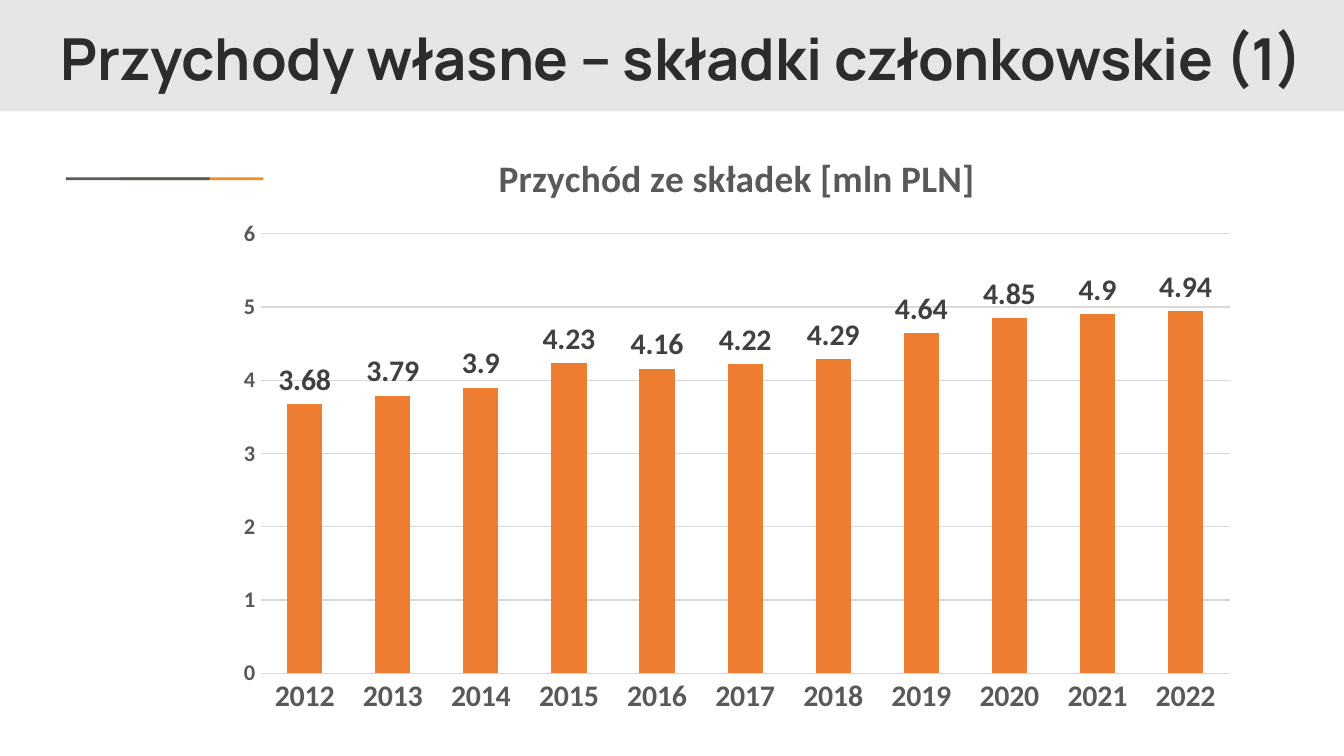
from lxml.etree import SubElement
from pptx import Presentation
from pptx.chart.data import CategoryChartData
from pptx.dml.color import RGBColor
from pptx.enum.chart import XL_CHART_TYPE, XL_LABEL_POSITION, XL_TICK_MARK
from pptx.enum.shapes import MSO_SHAPE
from pptx.enum.text import MSO_ANCHOR, PP_ALIGN
from pptx.oxml.ns import qn
from pptx.util import Inches, Pt

TITLE = "Przychody własne – składki członkowskie (1)"
CHART_TITLE = "Przychód ze składek [mln PLN]"
SERIES_NAME = "Series 1"
FIRST_YEAR = 2012
REVENUE = [3.68, 3.79, 3.9, 4.23, 4.16, 4.22, 4.29, 4.64, 4.85, 4.9, 4.94]

WIDTH = 10
HEIGHT = WIDTH * 9 / 16
THEME = {
    "band": "E7E6E6", "orange": "F68B1F", "gray": "58595B",
    "bar": "ED7D31", "grid": "D9D9D9",
    "title": {"name": "Manrope", "size": 31, "bold": True, "color": "2C2C2C"},
    "chart": {"name": "Calibri", "size": 10, "color": "000000"},
    "chart_title": {"name": "Calibri", "size": 20, "bold": True, "color": "595959"},
    "years": {"name": "Calibri", "size": 16, "bold": True, "color": "595959"},
    "scale": {"name": "Calibri", "size": 12, "bold": True, "color": "595959"},
    "labels": {"name": "Calibri", "size": 16, "bold": True, "color": "404040"},
}
RULE_LENGTH, RULE_WEIGHT, RULE_TOP = 1.07, 0.02, 1.32
BLOCKS = [  # left, top, width, height, colour
    (0, 0, WIDTH, 0.83, "band"),
    (0.89, RULE_TOP, RULE_LENGTH, RULE_WEIGHT, "orange"),
    (0.49, RULE_TOP, RULE_LENGTH, RULE_WEIGHT, "gray"),
]
TITLE_BOX = (0.29, 0.1, 9.56, 0.72)
CHART_BOX = (1.66, 0.97, 7.64, 4.44)
# Inches from the chart's top left corner
PLOT_AREA = {"x": 0.28, "y": 0.77, "w": 7.21, "h": 3.27}
TITLE_SPOT = {"x": 2, "y": 0.11}


def inches(box):
    return [Inches(length) for length in box]


def style_font(font, role):
    for key, value in THEME[role].items():
        if key == "color":
            font.color.rgb = RGBColor.from_string(value)
        else:
            setattr(font, key, Pt(value) if key == "size" else value)


def paint_line(line, color):
    line.color.rgb = RGBColor.from_string(THEME[color])
    line.width = Pt(0.75)


def place(element, spot, inner=False):
    """Fix a chart part at a spot, stored as shares of the chart's size."""
    layout = element.find(qn("c:layout"))
    if layout is None:
        layout = SubElement(element, qn("c:layout"))
        text = element.find(qn("c:tx"))
        if text is not None:
            text.addnext(layout)
        else:
            element.insert(0, layout)
    manual = SubElement(layout, qn("c:manualLayout"))
    if inner:
        SubElement(manual, qn("c:layoutTarget")).set("val", "inner")
    for side in ("x", "y"):
        SubElement(manual, qn(f"c:{side}Mode")).set("val", "edge")
    chart_width, chart_height = CHART_BOX[2:]
    for side, length in spot.items():
        share = length / (chart_width if side in "xw" else chart_height)
        SubElement(manual, qn(f"c:{side}")).set("val", f"{share:.4f}")


def add_block(page, left, top, width, height, color):
    block = page.shapes.add_shape(MSO_SHAPE.RECTANGLE, *inches((left, top, width, height)))
    block.shadow.inherit = False
    block.fill.solid()
    block.fill.fore_color.rgb = RGBColor.from_string(THEME[color])
    block.line.fill.background()


def add_title(page):
    frame = page.shapes.add_textbox(*inches(TITLE_BOX)).text_frame
    settings = {"word_wrap": True, "vertical_anchor": MSO_ANCHOR.MIDDLE,
                "margin_top": 0, "margin_bottom": 0}
    for key, value in settings.items():
        setattr(frame, key, value)
    para = frame.paragraphs[0]
    para.alignment, para.line_spacing = PP_ALIGN.CENTER, 0.9
    span = para.add_run()
    span.text = TITLE
    style_font(span.font, "title")


def add_revenue_chart(page):
    data = CategoryChartData()
    data.categories = [str(FIRST_YEAR + step) for step in range(len(REVENUE))]
    data.add_series(SERIES_NAME, REVENUE)
    chart = page.shapes.add_chart(
        XL_CHART_TYPE.COLUMN_CLUSTERED, *inches(CHART_BOX), data).chart
    style_font(chart.font, "chart")
    chart.has_legend = False
    chart.has_title = True
    para = chart.chart_title.text_frame.paragraphs[0]
    span = para.add_run()
    span.text = CHART_TITLE
    style_font(span.font, "chart_title")
    chart.chart_title.include_in_layout = False

    years, scale = chart.category_axis, chart.value_axis
    for axis, role in ((years, "years"), (scale, "scale")):
        axis.major_tick_mark = axis.minor_tick_mark = XL_TICK_MARK.NONE
        style_font(axis.tick_labels.font, role)
    paint_line(years.format.line, "grid")
    scale.format.line.fill.background()
    paint_line(scale.major_gridlines.format.line, "grid")
    for key, value in {"minimum_scale": 0, "maximum_scale": 6, "major_unit": 1}.items():
        setattr(scale, key, value)

    plot = chart.plots[0]
    plot.gap_width, plot.vary_by_categories = 150, False
    bars = plot.series[0]
    bars.format.fill.solid()
    bars.format.fill.fore_color.rgb = RGBColor.from_string(THEME["bar"])
    labels = bars.data_labels
    labels.show_value = True
    labels.position = XL_LABEL_POSITION.OUTSIDE_END
    style_font(labels.font, "labels")

    root = chart.element.find(qn("c:chart"))
    place(root.find(qn("c:title")), TITLE_SPOT)
    place(root.find(qn("c:plotArea")), PLOT_AREA, inner=True)


def main():
    deck = Presentation()
    deck.slide_width, deck.slide_height = inches((WIDTH, HEIGHT))
    page = deck.slides.add_slide(deck.slide_layouts[6])
    for block in BLOCKS:
        add_block(page, *block)
    add_title(page)
    add_revenue_chart(page)
    deck.save("out.pptx")


if __name__ == "__main__":
    main()
